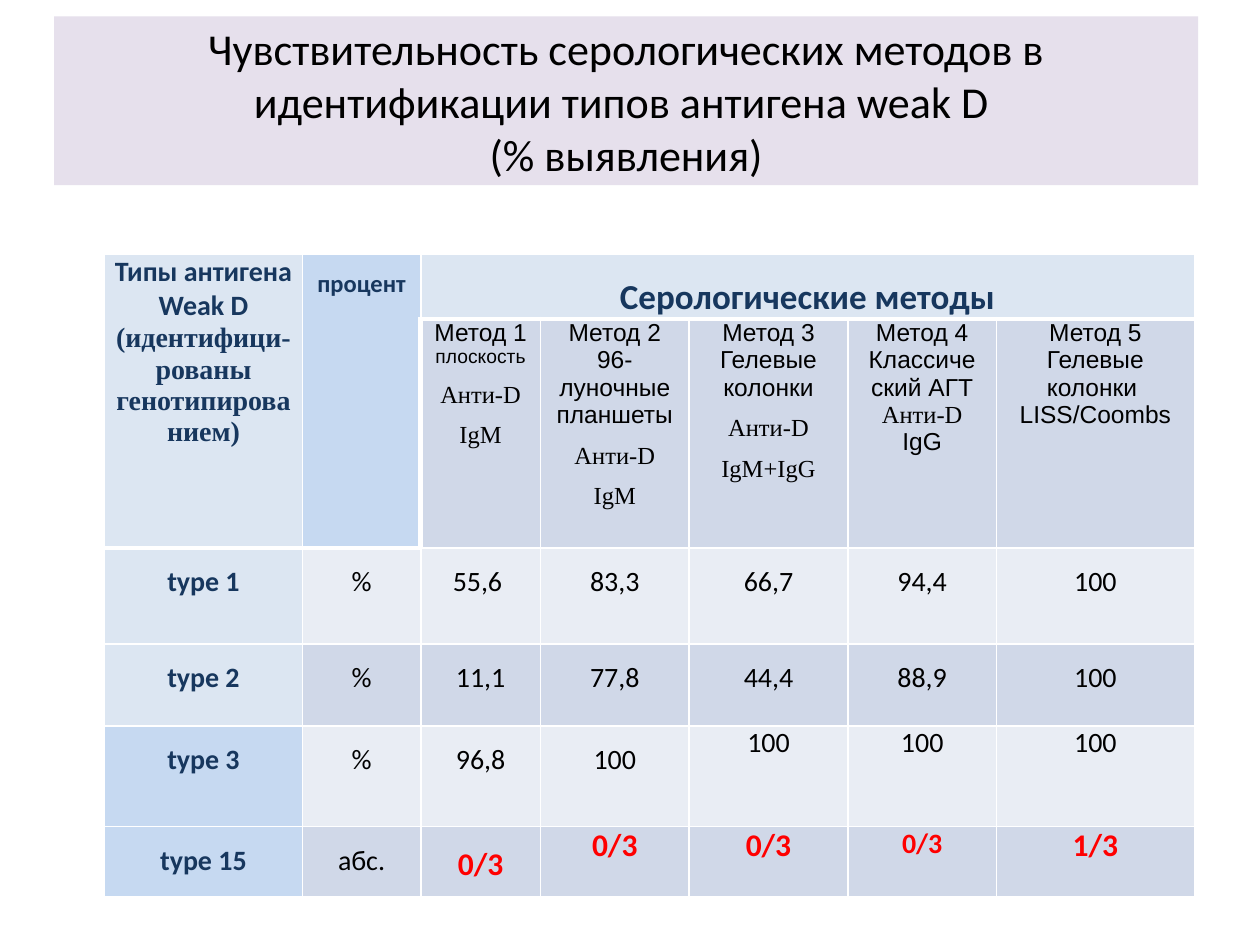
import pptx
import pptx.dml.color
import pptx.enum.text
import pptx.util
from lxml import etree
from pptx.oxml.ns import qn
from pptx.util import Inches

NAVY, BLACK, RED, WHITE = "17375E", "000000", "FF0000", "FFFFFF"
LILAC, PALE, SKY = "E6E0EC", "DCE6F2", "C6D9F1"
BAND_DARK, BAND_LIGHT = "D0D8E8", "E9EDF4"
THIN, THICK = 1, 3

# Text formats: "spacing" belongs to the paragraph, the rest to the font
BASE = {"name": "Calibri", "size": 16, "bold": False, "color": BLACK, "spacing": 1.0}
HEADING = {**BASE, "bold": True, "color": NAVY}
METHOD = {**BASE, "name": "Arial", "size": 14}
REAGENT = {**METHOD, "name": "Times New Roman"}
REAGENT_WIDE = {**REAGENT, "spacing": 1.5}
VALUE = {**BASE, "spacing": 1.5}
MISS = {**BASE, "size": 18, "bold": True, "color": RED}


def rgb(hex_string):
    return pptx.dml.color.RGBColor.from_string(hex_string)


class SlideBuilder:
    def __init__(self, presentation):
        self.slide = presentation.slides.add_slide(presentation.slide_layouts[5])

    def format_paragraph(self, paragraph, style):
        paragraph.alignment = pptx.enum.text.PP_ALIGN.CENTER
        paragraph.line_spacing = style["spacing"]
        for run in paragraph.runs:
            run.font.size = pptx.util.Pt(style["size"])
            run.font.color.rgb = rgb(style["color"])
            for attribute in ("name", "bold"):
                setattr(run.font, attribute, style[attribute])

    def title(self, text, left, top, width, height, fill, style):
        heading = self.slide.shapes.title
        box = {"left": left, "top": top, "width": width, "height": height}
        for side, length in box.items():
            setattr(heading, side, Inches(length))
        heading.fill.solid()
        heading.fill.fore_color.rgb = rgb(fill)
        frame = heading.text_frame
        frame.text = text
        frame.auto_size = pptx.enum.text.MSO_AUTO_SIZE.NONE
        frame.vertical_anchor = pptx.enum.text.MSO_ANCHOR.MIDDLE
        self.format_paragraph(frame.paragraphs[0], style)

    def table(self, left, top, widths, heights):
        grid = self.slide.shapes.add_table(
            len(heights), len(widths), Inches(left), Inches(top),
            Inches(sum(widths)), Inches(sum(heights))).table
        grid.first_row = grid.horz_banding = False
        for column, width in zip(grid.columns, widths):
            column.width = Inches(width)
        for row, height in zip(grid.rows, heights):
            row.height = Inches(height)
        return grid

    def cell(self, cell, paragraphs, fill):
        margins = {"margin_left": 0.05, "margin_right": 0.05,
                   "margin_top": 0, "margin_bottom": 0}
        for margin, length in margins.items():
            setattr(cell, margin, Inches(length))
        cell.fill.solid()
        cell.fill.fore_color.rgb = rgb(fill)
        cell.text = "\n".join(text for text, _ in paragraphs)
        for paragraph, (_, style) in zip(cell.text_frame.paragraphs, paragraphs):
            self.format_paragraph(paragraph, style)

    def borders(self, cell, thick_sides):
        properties = cell._tc.get_or_add_tcPr()
        for position, side in enumerate("LRTB"):
            points = THICK if side in thick_sides else THIN
            line = etree.Element(qn("a:ln" + side), w=str(pptx.util.Pt(points)))
            solid = etree.SubElement(line, qn("a:solidFill"))
            etree.SubElement(solid, qn("a:srgbClr"), val=WHITE)
            properties.insert(position, line)


def main():
    presentation = pptx.Presentation()
    presentation.slide_width, presentation.slide_height = Inches(10), Inches(7.5)
    builder = SlideBuilder(presentation)

    # Title
    builder.title(
        "Чувствительность серологических методов в идентификации "
        "типов антигена weak D \v(% выявления)",
        0.43, 0.13, 9.08, 1.34, LILAC, {**BASE, "size": 25.2})

    # Table grid and merged headings
    sensitivity = builder.table(
        0.83, 2.02, [1.57, 0.94, 0.95, 1.18, 1.26, 1.18, 1.57],
        [0.5, 1.82, 0.76, 0.65, 0.8, 0.56])
    for start, end in [((0, 0), (1, 0)), ((0, 1), (1, 1)), ((0, 2), (0, 6))]:
        sensitivity.cell(*start).merge(sensitivity.cell(*end))
    headings = [
        ([("Типы антигена Weak D", HEADING),
          ("(идентифици-рованы генотипированием)",
           {**HEADING, "name": "Times New Roman"})], PALE),
        ([("процент", {**HEADING, "size": 14, "spacing": 1.5})], SKY),
        ([("Серологические методы", {**HEADING, "size": 20, "spacing": 1.5})], PALE),
    ]
    for column, (paragraphs, fill) in enumerate(headings):
        builder.cell(sensitivity.cell(0, column), paragraphs, fill)

    # Serological methods
    methods = [
        [("Метод 1", METHOD), ("плоскость", {**METHOD, "size": 11}),
         ("Анти-D", REAGENT_WIDE), ("IgM", REAGENT_WIDE)],
        [("Метод 2", METHOD), ("96-луночные планшеты", METHOD),
         ("Анти-D", REAGENT_WIDE), ("IgM", REAGENT_WIDE)],
        [("Метод 3", METHOD), ("Гелевые колонки", METHOD),
         ("Анти-D", REAGENT_WIDE), ("IgM+IgG", REAGENT_WIDE)],
        [("Метод 4", METHOD), ("Классиче", METHOD), ("ский АГТ", METHOD),
         ("Анти-D", REAGENT), ("IgG", METHOD)],
        [("Метод 5", METHOD), ("Гелевые колонки ", METHOD), ("LISS/Coombs", METHOD)],
    ]
    for column, paragraphs in enumerate(methods, start=2):
        builder.cell(sensitivity.cell(1, column), paragraphs, BAND_DARK)

    # Results: type, unit, label fill, band fill, values, style of each value
    results = [
        ("type 1", "%", PALE, BAND_LIGHT,
         ["55,6 ", "83,3", "66,7", "94,4", "100"], [VALUE] * 5),
        ("type 2", "%", PALE, BAND_DARK,
         ["11,1", "77,8", "44,4", "88,9", "100"], [VALUE] * 5),
        ("type 3", "%", SKY, BAND_LIGHT,
         ["96,8", "100", "100", "100", "100"], [VALUE] * 2 + [BASE] * 3),
        ("type 15", "абс.", SKY, BAND_DARK,
         ["0/3", "0/3", "0/3", "0/3", "1/3"],
         [{**MISS, "spacing": 1.5}, MISS, MISS, {**MISS, "size": 16}, MISS]),
    ]
    for row, (label, unit, label_fill, band, values, styles) in enumerate(results, 2):
        texts = [label, unit] + values
        formats = [{**HEADING, "spacing": 1.5}, VALUE] + styles
        fills = [label_fill] + [band] * 6
        for column, (text, style, fill) in enumerate(zip(texts, formats, fills)):
            builder.cell(sensitivity.cell(row, column), [(text, style)], fill)

    # Borders: thick under the headings, thin elsewhere
    thick = {(row, column): "B" for row, column in [(0, 0), (0, 1), (1, 0), (1, 1)]}
    thick.update({(0, column): "B" for column in range(2, 7)})
    thick.update({(1, column): "T" for column in range(3, 7)})
    thick.update({(1, 2): "LT", (2, 0): "T", (2, 1): "T"})
    for row in range(len(sensitivity.rows)):
        for column in range(len(sensitivity.columns)):
            builder.borders(sensitivity.cell(row, column), thick.get((row, column), ""))

    presentation.save("out.pptx")


if __name__ == "__main__":
    main()
